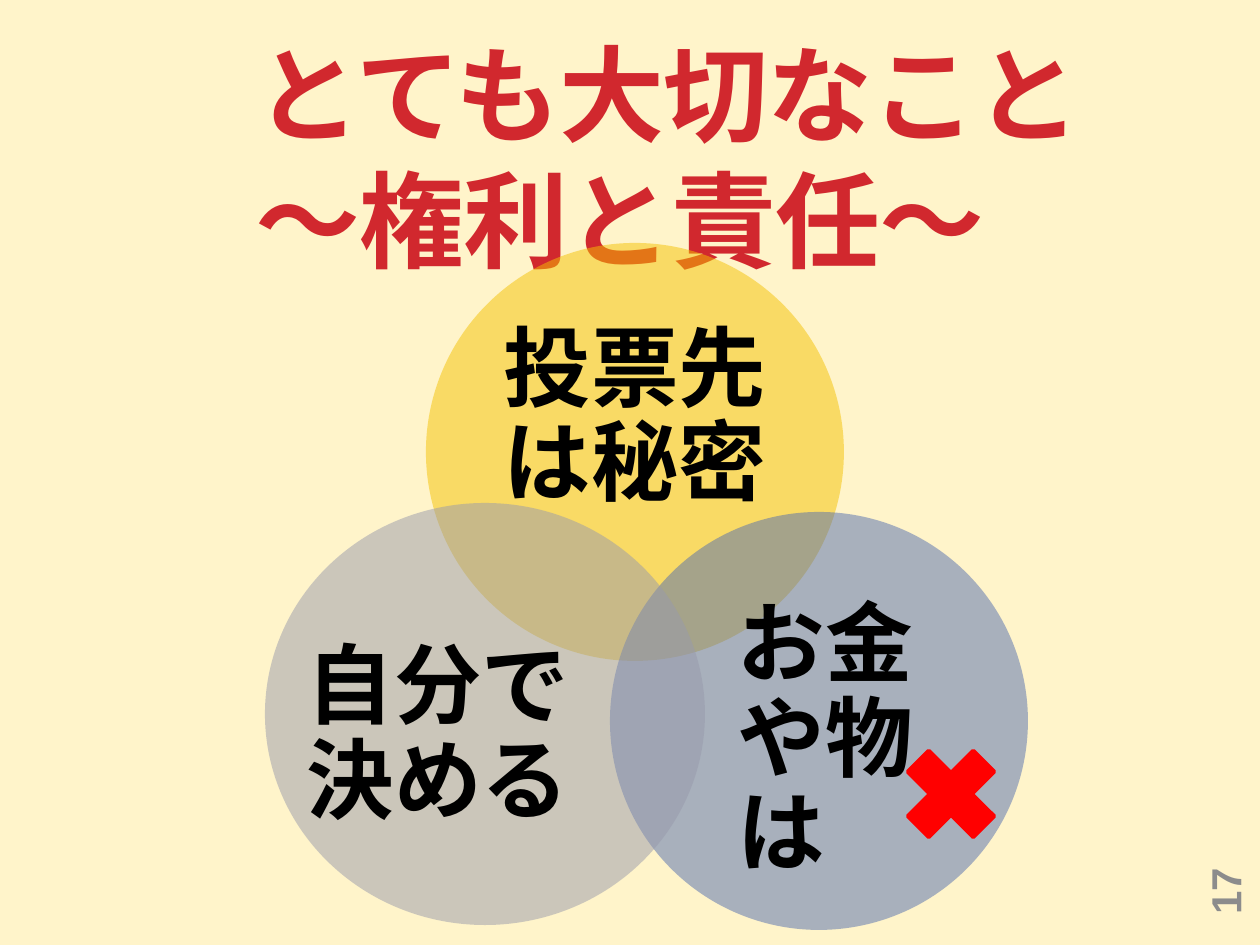
"""Build a slide with a title over three overlapping circles of voting principles."""
from lxml import etree
from pptx import Presentation
from pptx.dml.color import RGBColor
from pptx.enum.shapes import MSO_SHAPE
from pptx.enum.text import MSO_ANCHOR, PP_ALIGN
from pptx.oxml.ns import qn
from pptx.util import Pt

PX = 914400 // 126
WIDTH, HEIGHT = 1260, 945
CREAM = RGBColor(0xFF, 0xF4, 0xCA)
CRIMSON = RGBColor(0xD1, 0x28, 0x2E)
GOLD = RGBColor(0xF5, 0xC2, 0x01)
BLUE = RGBColor(0x52, 0x6D, 0xB0)
GRAY = RGBColor(0x98, 0x9A, 0xAC)
SILVER = RGBColor(0x8C, 0x8C, 0x8C)
BLACK = RGBColor(0, 0, 0)
RED = RGBColor(0xFF, 0, 0)
JAPANESE = "Noto Sans CJK JP"

TITLE = "とても大切なこと\v～権利と責任～"
TITLE_BOX = (35, 35, 1160, 253)
PAGE_NUMBER = "17"
PAGE_NUMBER_BOX = (1134, 812, 181, 50)
CROSS_BOX = (888, 731, 126, 126)
CIRCLES = [
    ("投票先は秘密", GOLD, (426, 243, 418, 418), (481, 324, 308, 188), PP_ALIGN.CENTER),
    ("お金や物は", BLUE, (610, 512, 418, 418), (738, 625, 251, 231), PP_ALIGN.LEFT),
    ("自分で決める", GRAY, (265, 503, 440, 422), (304, 619, 268, 232), PP_ALIGN.CENTER),
]


def emu(box):
    return [length * PX for length in box]


def add_text(slide, text, box, size, color, font=JAPANESE, align=PP_ALIGN.LEFT,
             anchor=MSO_ANCHOR.MIDDLE, left_inset=0, vertical_inset=0,
             line_height=None, tracking=None, rotation=0):
    shape = slide.shapes.add_textbox(*emu(box))
    shape.rotation = rotation
    frame = shape.text_frame
    frame.word_wrap = True
    frame.vertical_anchor = anchor
    frame.margin_left = left_inset * PX
    frame.margin_right = 0
    frame.margin_top = frame.margin_bottom = vertical_inset * PX
    paragraph = frame.paragraphs[0]
    paragraph.text = text
    paragraph.alignment = align
    if line_height:
        paragraph.line_spacing = Pt(line_height)
    for run in paragraph.runs:
        run.font.size = Pt(size)
        run.font.bold = True
        run.font.name = font
        run.font.color.rgb = color
        properties = run.font._element
        etree.SubElement(properties, qn("a:ea")).set("typeface", font)
        if tracking:
            properties.set("spc", str(tracking))
    return shape


def add_filled(slide, preset, box, color, opacity=100):
    shape = slide.shapes.add_shape(preset, *emu(box))
    shape.shadow.inherit = False
    shape.fill.solid()
    shape.fill.fore_color.rgb = color
    shape.line.fill.background()
    if opacity < 100:
        fill_color = shape._element.spPr.find(qn("a:solidFill"))[0]
        etree.SubElement(fill_color, qn("a:alpha")).set("val", str(opacity * 1000))
    return shape


def main():
    presentation = Presentation()
    presentation.slide_width, presentation.slide_height = emu((WIDTH, HEIGHT))
    slide = presentation.slides.add_slide(presentation.slide_layouts[6])
    slide.background.fill.solid()
    slide.background.fill.fore_color.rgb = CREAM

    add_text(slide, TITLE, TITLE_BOX, 60, CRIMSON, anchor=MSO_ANCHOR.BOTTOM,
             left_inset=221, vertical_inset=6, line_height=72, tracking=-60)
    add_text(slide, PAGE_NUMBER, PAGE_NUMBER_BOX, 24, SILVER, font="Arial",
             left_inset=13, rotation=270)
    for text, color, circle, label, align in CIRCLES:
        add_filled(slide, MSO_SHAPE.OVAL, circle, color, opacity=50)
        add_text(slide, text, label, 50, BLACK, align=align, line_height=54)
    cross = add_filled(slide, MSO_SHAPE.MATH_MULTIPLY, CROSS_BOX, RED)
    cross.line.color.rgb = RED
    cross.line.width = Pt(2.25)

    presentation.save("out.pptx")


if __name__ == "__main__":
    main()
